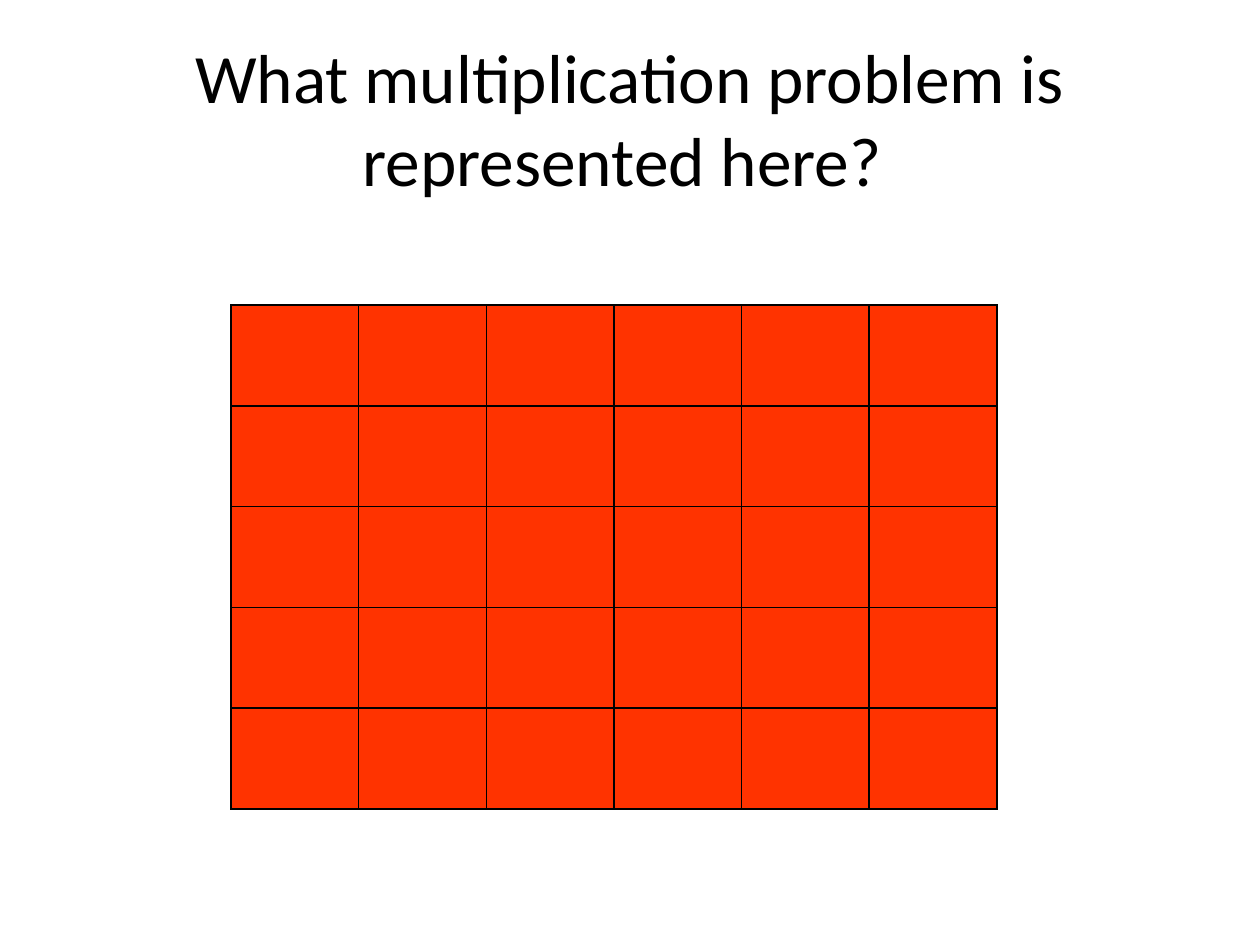
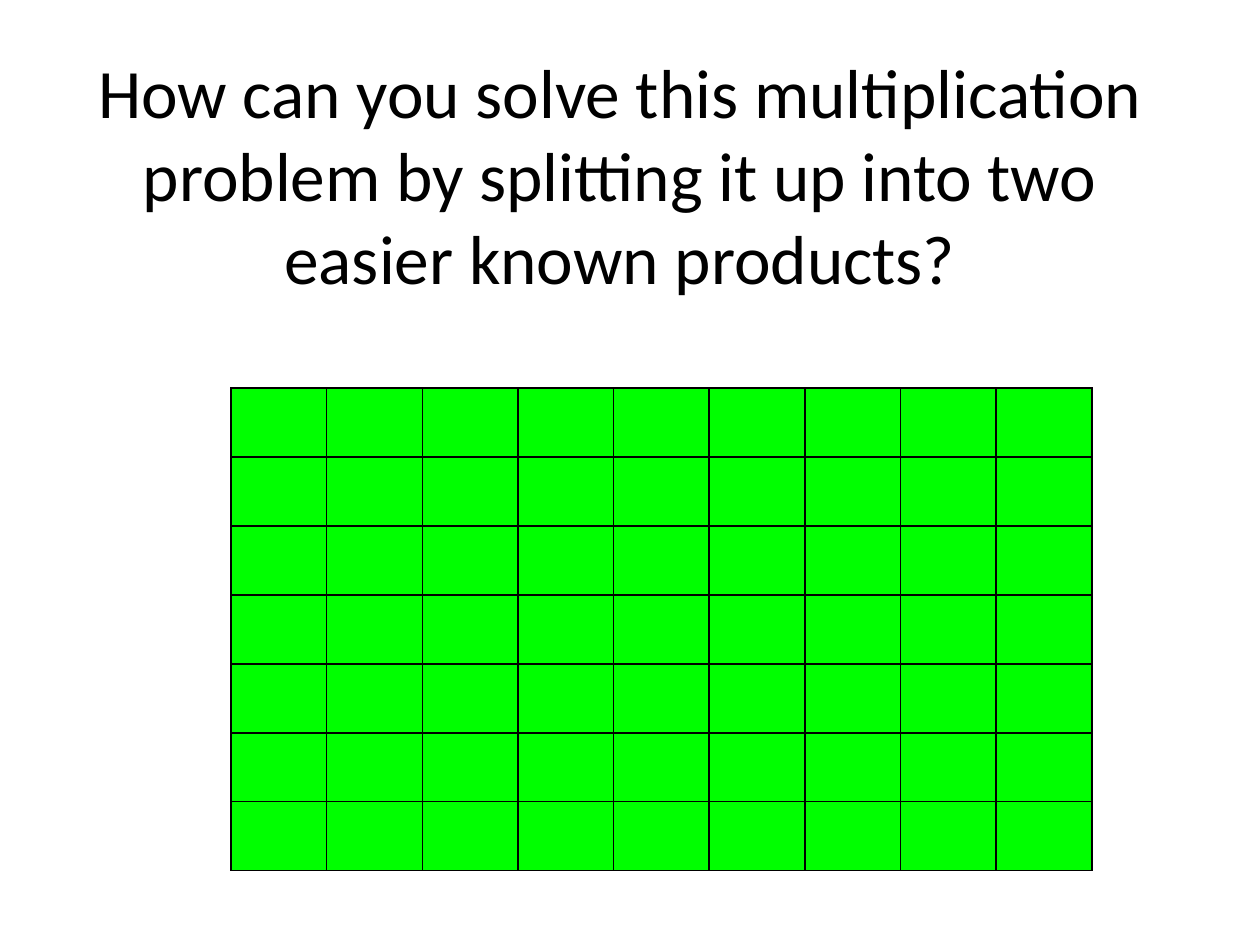
from lxml import etree
from pptx import Presentation
from pptx.dml.color import RGBColor
from pptx.enum.text import MSO_ANCHOR, PP_ALIGN
from pptx.oxml.ns import qn
from pptx.util import Pt

EMU_PER_PX = 914400 / 126
SLIDE_SIZE = (1260, 945)
BLANK_LAYOUT = 6
MIDDLE = MSO_ANCHOR.MIDDLE
CENTER = PP_ALIGN.CENTER

COLORS = {"title": "000000", "border": "000000", "red": "FF3300", "green": "00FF00"}
TITLE_FONT = "Calibri"
TITLE_POINTS = 39.6
TITLE_SIZE = (1134, 158)
BORDER_POINTS = 1
ARRAY_LEFT = 231


def px(length):
    return round(length * EMU_PER_PX)


def add_title(slide, text, left, top):
    width, height = TITLE_SIZE
    box = slide.shapes.add_textbox(px(left), px(top), px(width), px(height))
    text_frame = box.text_frame
    text_frame.word_wrap = True
    text_frame.vertical_anchor = MIDDLE
    text_frame.text = text
    paragraph = text_frame.paragraphs[0]
    paragraph.alignment = CENTER
    font = paragraph.runs[0].font
    font.name = TITLE_FONT
    font.size = Pt(TITLE_POINTS)
    font.color.rgb = RGBColor.from_string(COLORS["title"])


def add_borders(cell):
    properties = cell._tc.get_or_add_tcPr()
    for side in ("a:lnL", "a:lnR", "a:lnT", "a:lnB"):
        line = etree.SubElement(properties, qn(side), w=str(Pt(BORDER_POINTS)))
        fill = etree.SubElement(line, qn("a:solidFill"))
        etree.SubElement(fill, qn("a:srgbClr"), val=COLORS["border"])


def add_array(slide, rows, columns, top, width, height, color):
    """Draw a multiplication array as a table of equal, filled cells."""
    table = slide.shapes.add_table(
        rows, columns, px(ARRAY_LEFT), px(top), px(width), px(height)
    ).table
    table.first_row = False
    table.horz_banding = False
    for cell in table.iter_cells():
        add_borders(cell)
        cell.fill.solid()
        cell.fill.fore_color.rgb = RGBColor.from_string(COLORS[color])


def add_blank_slide(presentation):
    return presentation.slides.add_slide(presentation.slide_layouts[BLANK_LAYOUT])


def main():
    presentation = Presentation()
    presentation.slide_width, presentation.slide_height = map(px, SLIDE_SIZE)

    slide = add_blank_slide(presentation)
    add_title(slide, "What multiplication problem is represented here? ", 63, 38)
    add_array(slide, rows=5, columns=6, top=305, width=766, height=504, color="red")

    slide = add_blank_slide(presentation)
    add_title(
        slide,
        "How can you solve this multiplication problem by splitting it up "
        "into two easier known products?",
        53,
        95,
    )
    add_array(slide, rows=7, columns=9, top=388, width=861, height=483, color="green")

    presentation.save("out.pptx")


if __name__ == "__main__":
    main()
